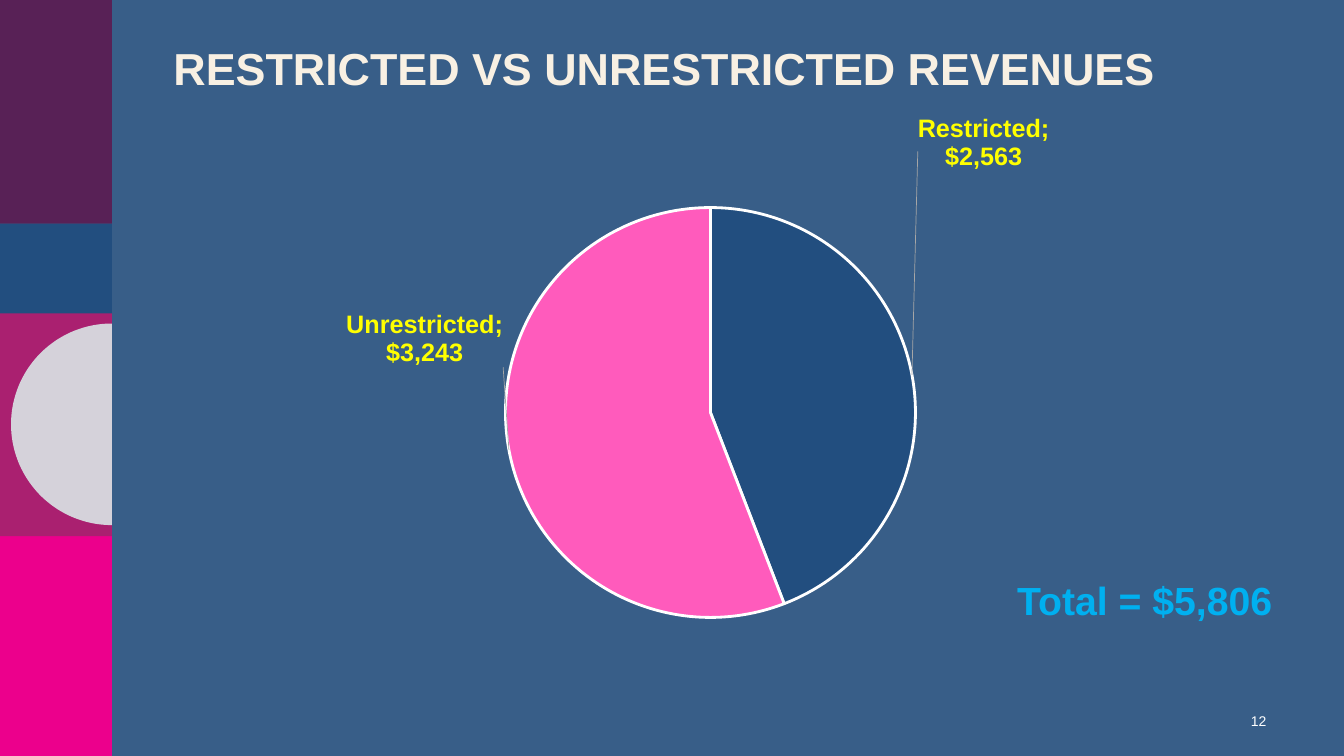
from math import cos, pi, sin

from lxml.etree import SubElement
from pptx import Presentation
from pptx.chart.data import CategoryChartData
from pptx.dml.color import RGBColor
from pptx.enum.chart import XL_CHART_TYPE as ChartType, XL_LABEL_POSITION as LabelPosition
from pptx.enum.shapes import MSO_SHAPE as Shape
from pptx.enum.text import MSO_ANCHOR as Anchor, PP_ALIGN as Align
from pptx.oxml import parse_xml
from pptx.oxml.ns import nsdecls, qn
from pptx.util import Inches, Pt

FONT = "Arial"
DOLLARS = '"$"#,##0'
BACKGROUND = RGBColor(0x38, 0x5E, 0x88)
PINK = RGBColor(0xEC, 0x00, 0x8C)
MAGENTA = RGBColor(0xAA, 0x20, 0x70)
PURPLE = RGBColor(0x58, 0x21, 0x56)
NAVY = RGBColor(0x22, 0x4E, 0x7F)
ROSE = RGBColor(0xFF, 0x5B, 0xBC)
GREY = RGBColor(0xD5, 0xD2, 0xDA)
CREAM = RGBColor(0xF8, 0xF0, 0xE3)
YELLOW = RGBColor(0xFF, 0xFF, 0x00)
SKY = RGBColor(0x00, 0xB0, 0xF0)
WHITE = RGBColor(0xFF, 0xFF, 0xFF)


def style_font(font, size, color, bold=False):
    """Apply the slide typeface with a size, colour and weight."""
    font.name, font.size, font.bold = FONT, Pt(size), bold
    font.color.rgb = color


def paint(shape, color):
    """Give a shape a flat fill without line or shadow."""
    shape.shadow.inherit = False
    shape.fill.solid()
    shape.fill.fore_color.rgb = color
    shape.line.fill.background()


def add_sidebar(page, left, top, width):
    """Stack the colour bands and the half disc on the left edge."""
    bands = [(5.28, 2.22, PINK), (3.1, 2.22, MAGENTA), (0, 2.22, PURPLE), (2.22, 0.89, NAVY)]
    for offset, height, color in bands:
        band = page.shapes.add_shape(
            Shape.RECTANGLE, Inches(left), Inches(top + offset), Inches(width), Inches(height))
        paint(band, color)
    center_x, center_y, radius, steps = left + width, top + 4.21, 1, 90
    angles = [pi / 2 + pi * step / steps for step in range(steps + 1)]
    points = [(Inches(center_x + radius * cos(angle)), Inches(center_y + radius * sin(angle)))
              for angle in angles]
    outline = page.shapes.build_freeform(*points[0])
    outline.add_line_segments(points[1:], close=True)
    paint(outline.convert_to_shape(), GREY)


def add_title(page, left, top, width, height):
    """Place and format the title placeholder."""
    title = page.shapes.title
    title.left, title.top = Inches(left), Inches(top)
    title.width, title.height = Inches(width), Inches(height)
    frame = title.text_frame
    frame.text = "RESTRICTED VS UNRESTRICTED REVENUES"
    frame.vertical_anchor = Anchor.TOP
    para = frame.paragraphs[0]
    para.alignment, para.line_spacing = Align.LEFT, 0.9
    style_font(para.runs[0].font, 32, CREAM, True)


def add_text(page, left, top, width, height, text, size, color, bold=False,
             align=Align.LEFT, anchor=Anchor.TOP):
    """Add a one-line text box."""
    box = page.shapes.add_textbox(Inches(left), Inches(top), Inches(width), Inches(height))
    frame = box.text_frame
    frame.word_wrap, frame.vertical_anchor = True, anchor
    frame.text = text
    para = frame.paragraphs[0]
    para.alignment = align
    style_font(para.runs[0].font, size, color, bold)


def make_layout(mode, **fractions):
    """Build a manual chart layout from fractions of the chart size."""
    parts = "".join(f'<c:{name} val="{value}"/>' for name, value in fractions.items())
    return parse_xml(f'<c:layout {nsdecls("c")}><c:manualLayout>{mode}{parts}'
                     '</c:manualLayout></c:layout>')


def add_label(point, x, y):
    """Show category and value, shifted from the outside-end position."""
    label = point.data_label
    style_font(label.font, 18, YELLOW, True)
    label.position = LabelPosition.OUTSIDE_END
    element = label.font._element.getparent().getparent().getparent().getparent()
    while element.tag != qn("c:dLbl"):
        element = element.getparent()
    element.insert(1, make_layout("", x=x, y=y))
    element.find(qn("c:showCatName")).set("val", "1")
    SubElement(element, qn("c:separator")).text = "; "


def add_revenue_pie(page, left, top, width, height):
    """Add the pie of restricted and unrestricted revenues."""
    data = CategoryChartData(number_format=DOLLARS)
    data.categories = ["Restricted", "Unrestricted"]
    data.add_series("Series 1", [2563, 3243])
    chart = page.shapes.add_chart(
        ChartType.PIE, Inches(left), Inches(top), Inches(width), Inches(height), data).chart
    chart.has_legend = chart.has_title = False
    chart.font.name, chart.font.size = FONT, Pt(10)
    plot = chart.plots[0]
    plot.vary_by_categories = True
    series = plot.series[0]
    labels = series.data_labels
    labels.show_value = labels.show_category_name = True
    labels.number_format, labels.number_format_is_linked = DOLLARS, False
    style_font(labels.font, 18, YELLOW, True)
    for index, (color, x, y) in enumerate([(NAVY, 0, -0.38), (ROSE, 0, -0.24)]):
        point = series.points[index]
        point.format.fill.solid()
        point.format.fill.fore_color.rgb = color
        point.format.line.color.rgb = WHITE
        point.format.line.width = Pt(2)
        add_label(point, x, y)
    leader = parse_xml(
        f'<c:leaderLines {nsdecls("c", "a")}><c:spPr><a:ln w="6350"><a:solidFill>'
        '<a:srgbClr val="A6A6A6"/></a:solidFill></a:ln></c:spPr></c:leaderLines>')
    series._element.find(qn("c:dLbls")).find(qn("c:showLeaderLines")).addnext(leader)
    area = chart._chartSpace.chart.plotArea
    for old in area.findall(qn("c:layout")):
        area.remove(old)
    inner = ('<c:layoutTarget val="inner"/><c:xMode val="edge"/><c:yMode val="edge"/>')
    area.insert(0, make_layout(inner, x=0.08, y=0.16, w=0.85, h=0.7))


def main():
    """Build the slide and save the deck."""
    deck = Presentation()
    deck.slide_width, deck.slide_height = Inches(13.33), Inches(7.5)
    page = deck.slides.add_slide(deck.slide_layouts[5])
    page.background.fill.solid()
    page.background.fill.fore_color.rgb = BACKGROUND
    add_sidebar(page, 0, 0, 1.11)
    add_title(page, 1.62, 0.41, 11.12, 1.02)
    add_text(page, 12.16, 6.95, 0.5, 0.4, "12", 10, WHITE, align=Align.RIGHT, anchor=Anchor.MIDDLE)
    add_revenue_pie(page, 1.82, 1.13, 10.35, 5.81)
    add_text(page, 9.99, 5.67, 3.18, 0.57, "Total = $5,806", 28, SKY, True)
    deck.save("out.pptx")


if __name__ == "__main__":
    main()
